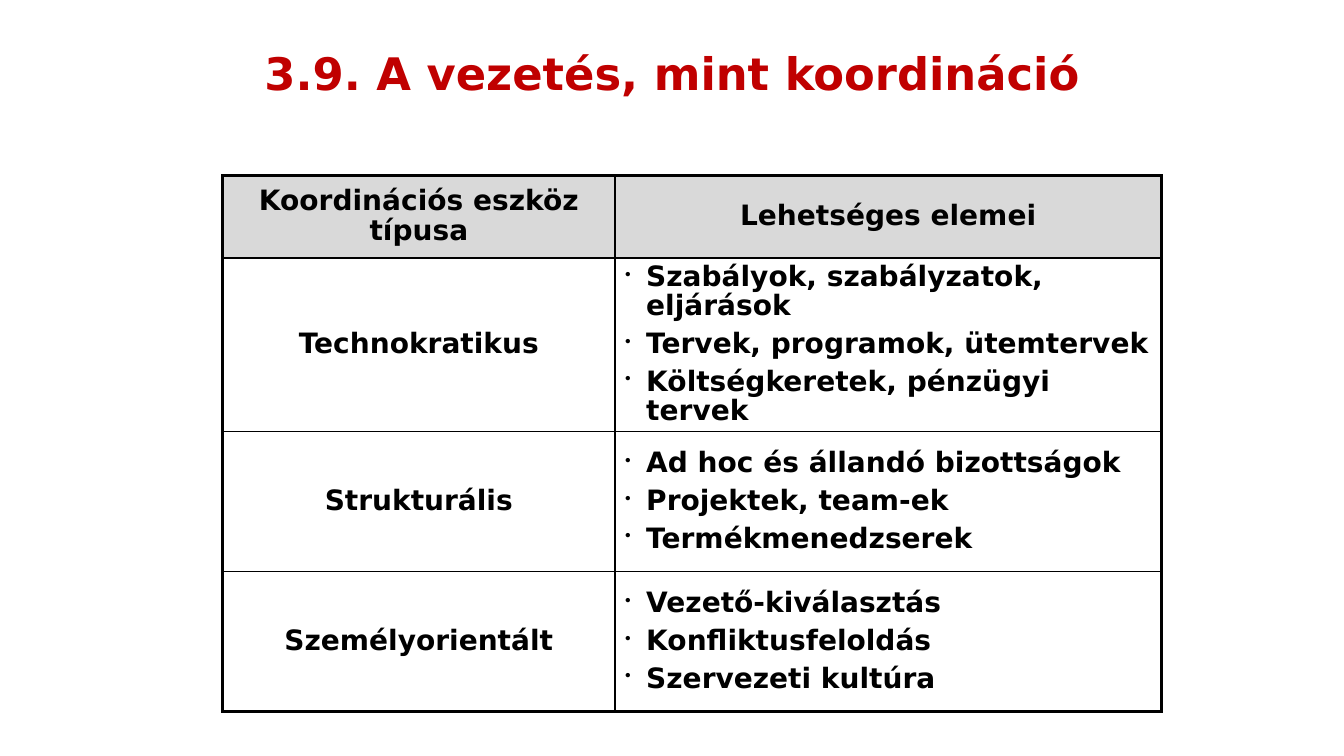
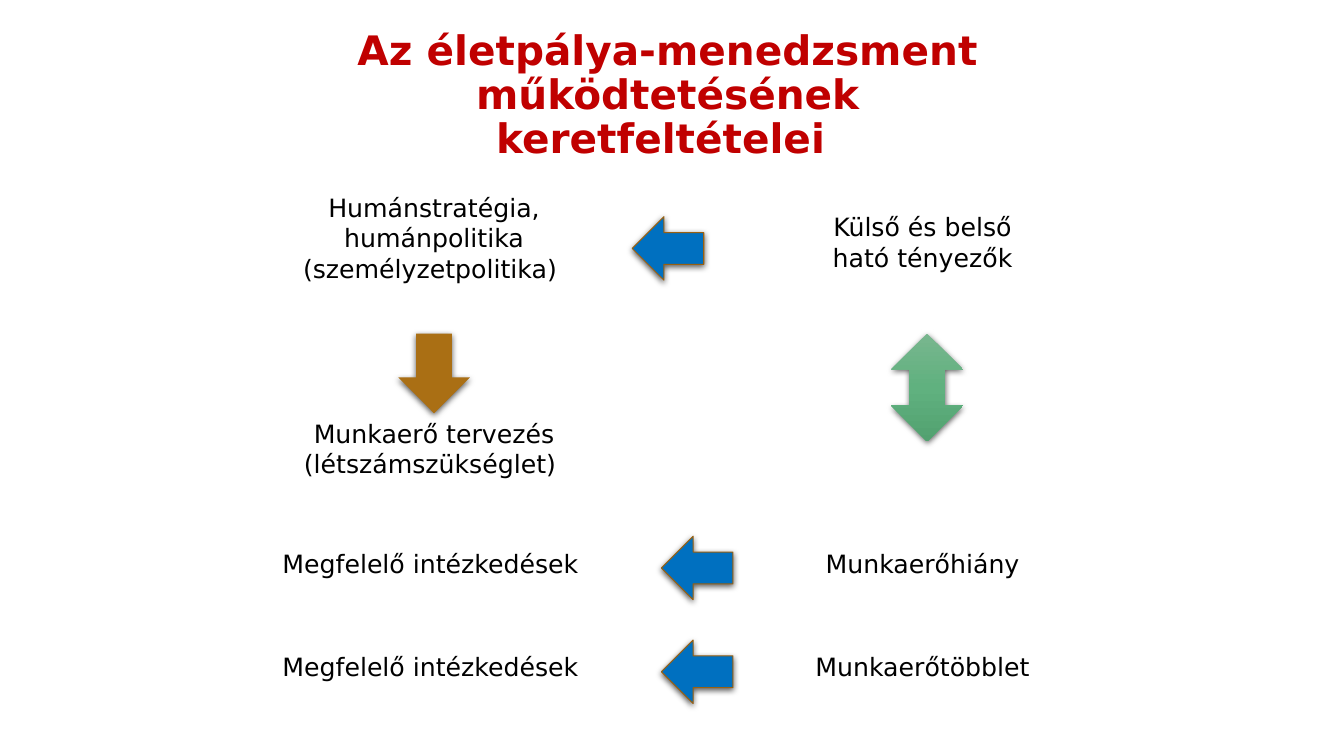
from dataclasses import dataclass

from lxml import etree
from pptx import Presentation
from pptx.dml.color import RGBColor
from pptx.enum.shapes import MSO_SHAPE
from pptx.enum.text import MSO_ANCHOR, MSO_AUTO_SIZE, PP_ALIGN
from pptx.oxml.ns import qn
from pptx.util import Inches, Pt

CENTER, LEFT = PP_ALIGN.CENTER, PP_ALIGN.LEFT
MIDDLE = MSO_ANCHOR.MIDDLE
NO_FIT, FIT_SHAPE = MSO_AUTO_SIZE.NONE, MSO_AUTO_SIZE.SHAPE_TO_FIT_TEXT
LEFT_ARROW = MSO_SHAPE.LEFT_ARROW
DOWN_ARROW = MSO_SHAPE.DOWN_ARROW
UP_DOWN_ARROW = MSO_SHAPE.UP_DOWN_ARROW

FONT = "DejaVu Sans"
COLORS = {
    "title": "C00000",
    "text": "000000",
    "header": "D9D9D9",
    "cell": "FFFFFF",
    "blue": "0070C0",
    "outline": "986011",
    "brown": "AA6F14",
    "green_light": "78B68E",
    "green_mid": "60B17F",
    "green_dark": "52A170",
}
GREEN_STOPS = ((0, "green_light"), (50, "green_mid"), (100, "green_dark"))
OUTER_BORDER, INNER_BORDER = 2.25, 1


@dataclass
class Category:
    name: str
    elements: list[str]
    height: float


@dataclass
class Caption:
    lines: list[str]
    left: float
    top: float
    width: float
    height: float = 0.4


@dataclass
class Arrow:
    preset: int
    left: float
    top: float
    height: float
    fill: str = ""
    outline: str = ""
    width: float = 0.71


CATEGORIES = [
    Category("Technokratikus", ["Szabályok, szabályzatok, eljárások",
                                "Tervek, programok, ütemtervek",
                                "Költségkeretek, pénzügyi tervek"], 1.72),
    Category("Strukturális", ["Ad hoc és állandó bizottságok", "Projektek, team-ek",
                              "Termékmenedzserek"], 1.39),
    Category("Személyorientált", ["Vezető-kiválasztás", "Konfliktusfeloldás",
                                  "Szervezeti kultúra"], 1.39),
]

SHORTAGE_TOP, SURPLUS_TOP = 5.39, 6.41
CAPTIONS = [
    Caption(["Humánstratégia, humánpolitika (személyzetpolitika) "], 2.61, 1.86, 3.39, 1.01),
    Caption(["Munkaerő tervezés (létszámszükséglet) "], 2.61, 4.1, 3.39, 0.71),
    Caption(["Külső és belső ", "ható tényezők "], 7.42, 2.05, 3.54, 0.71),
    Caption(["Munkaerőhiány "], 7.7, SHORTAGE_TOP, 2.98),
    Caption(["Munkaerőtöbblet "], 7.72, SURPLUS_TOP, 2.94),
    *(Caption(["Megfelelő intézkedések "], 2.34, top, 3.94)
      for top in (SHORTAGE_TOP, SURPLUS_TOP)),
]
ARROWS = [
    *(Arrow(LEFT_ARROW, left, top, 0.63, "blue", "outline")
      for left, top in ((6.27, 2.15), (6.56, 5.32), (6.56, 6.35))),
    Arrow(DOWN_ARROW, 3.95, 3.31, 0.79, "brown"),
    Arrow(UP_DOWN_ARROW, 8.84, 3.31, 1.07),
]


def rgb(name: str) -> RGBColor:
    return RGBColor.from_string(COLORS[name])


def add_xml(parent, tag: str, **attributes):
    return etree.SubElement(parent, qn(tag), attributes)


def add_xml_color(parent, name: str):
    return add_xml(parent, "a:srgbClr", val=COLORS[name])


def style_runs(frame, size: float, color: str, bold: bool = False) -> None:
    for paragraph in frame.paragraphs:
        for run in paragraph.runs:
            run.font.name = FONT
            run.font.size = Pt(size)
            run.font.bold = bold
            run.font.color.rgb = rgb(color)


def add_titled_slide(deck, text: str, box: tuple, size: float):
    slide = deck.slides.add_slide(deck.slide_layouts[5])
    title = slide.shapes.title
    title.left, title.top, title.width, title.height = map(Inches, box)
    frame = title.text_frame
    frame.text = text
    frame.word_wrap = True
    frame.auto_size = NO_FIT
    frame.vertical_anchor = MIDDLE
    frame.paragraphs[0].alignment = CENTER
    frame.paragraphs[0].line_spacing = 0.9
    style_runs(frame, size, "title", bold=True)
    return slide


def add_bullet(paragraph) -> None:
    properties = paragraph._p.get_or_add_pPr()
    indent = Inches(0.21)
    properties.set("marL", str(indent))
    properties.set("indent", str(-indent))
    add_xml_color(add_xml(properties, "a:buClr"), "text")
    add_xml(properties, "a:buSzPct", val="60000")
    add_xml(properties, "a:buChar", char="•")


def set_borders(cell, widths: dict[str, float]) -> None:
    properties = cell._tc.get_or_add_tcPr()
    for side, width in widths.items():
        line = add_xml(properties, f"a:ln{side}", w=str(Pt(width)))
        add_xml_color(add_xml(line, "a:solidFill"), "text")


def fill_cell(cell, lines: list[str], fill: str, bulleted: bool) -> None:
    cell.fill.solid()
    cell.fill.fore_color.rgb = rgb(fill)
    cell.vertical_anchor = MIDDLE
    frame = cell.text_frame
    frame.text = "\n".join(lines)
    for index, paragraph in enumerate(frame.paragraphs):
        if bulleted:
            add_bullet(paragraph)
        paragraph.alignment = LEFT if bulleted else CENTER
        paragraph.line_spacing = 0.9
        paragraph.space_before = Pt(6 if index else 0)
    style_runs(frame, 20, "text", bold=True)


def add_coordination_table(slide) -> None:
    rows = [(["Koordinációs eszköz típusa"], ["Lehetséges elemei"])]
    rows += [([category.name], category.elements) for category in CATEGORIES]
    heights = [0.82] + [category.height for category in CATEGORIES]
    widths = [3.89, 5.42]
    table = slide.shapes.add_table(
        len(rows), len(widths), Inches(2.21), Inches(1.74),
        Inches(sum(widths)), Inches(sum(heights))).table
    table.first_row = table.horz_banding = False
    for column, width in zip(table.columns, widths):
        column.width = Inches(width)
    last_row, last_column = len(rows) - 1, len(widths) - 1
    for r, (row, height) in enumerate(zip(rows, heights)):
        table.rows[r].height = Inches(height)
        for c, lines in enumerate(row):
            edges = {"L": c == 0, "R": c == last_column, "T": r == 0, "B": r == last_row}
            cell = table.cell(r, c)
            set_borders(cell, {side: OUTER_BORDER if outer else INNER_BORDER
                               for side, outer in edges.items()})
            fill_cell(cell, lines, "cell" if r else "header", r > 0 and c == last_column)


def add_caption(slide, caption: Caption) -> None:
    box = slide.shapes.add_textbox(Inches(caption.left), Inches(caption.top),
                                   Inches(caption.width), Inches(caption.height))
    frame = box.text_frame
    frame.word_wrap = True
    frame.auto_size = FIT_SHAPE
    frame.text = "\n".join(caption.lines)
    for paragraph in frame.paragraphs:
        paragraph.alignment = CENTER
    style_runs(frame, 18, "text")


def add_shadow(shape) -> None:
    shape.shadow.inherit = False
    effects = shape._element.spPr.find(qn("a:effectLst"))
    shadow = add_xml(effects, "a:outerShdw", blurRad=str(Pt(4.5)), dist=str(Pt(1.5)),
                     dir="5400000", algn="ctr", rotWithShape="0")
    add_xml(add_xml_color(shadow, "text"), "a:alpha", val="63000")


def add_green_gradient(shape) -> None:
    gradient = add_xml(shape._element.spPr, "a:gradFill", rotWithShape="1")
    stops = add_xml(gradient, "a:gsLst")
    for percent, color in GREEN_STOPS:
        add_xml_color(add_xml(stops, "a:gs", pos=str(percent * 1000)), color)
    add_xml(gradient, "a:lin", ang="5400000", scaled="0")


def add_arrow(slide, arrow: Arrow) -> None:
    shape = slide.shapes.add_shape(arrow.preset, Inches(arrow.left), Inches(arrow.top),
                                   Inches(arrow.width), Inches(arrow.height))
    if arrow.fill:
        shape.fill.solid()
        shape.fill.fore_color.rgb = rgb(arrow.fill)
    else:
        add_green_gradient(shape)
    if arrow.outline:
        shape.line.color.rgb = rgb(arrow.outline)
        shape.line.width = Pt(0.75)
    else:
        shape.line.fill.background()
    add_shadow(shape)


def main() -> None:
    deck = Presentation()
    deck.slide_width, deck.slide_height = Inches(13.33), Inches(7.5)

    coordination = add_titled_slide(deck, "3.9. A vezetés, mint koordináció",
                                    (1.67, 0.36, 10, 0.78), 32)
    add_coordination_table(coordination)

    career = add_titled_slide(
        deck, "Az életpálya-menedzsment működtetésének keretfeltételei ",
        (3.26, 0.26, 6.73, 1.39), 29)
    for caption in CAPTIONS:
        add_caption(career, caption)
    for arrow in ARROWS:
        add_arrow(career, arrow)

    deck.save("out.pptx")


if __name__ == "__main__":
    main()
